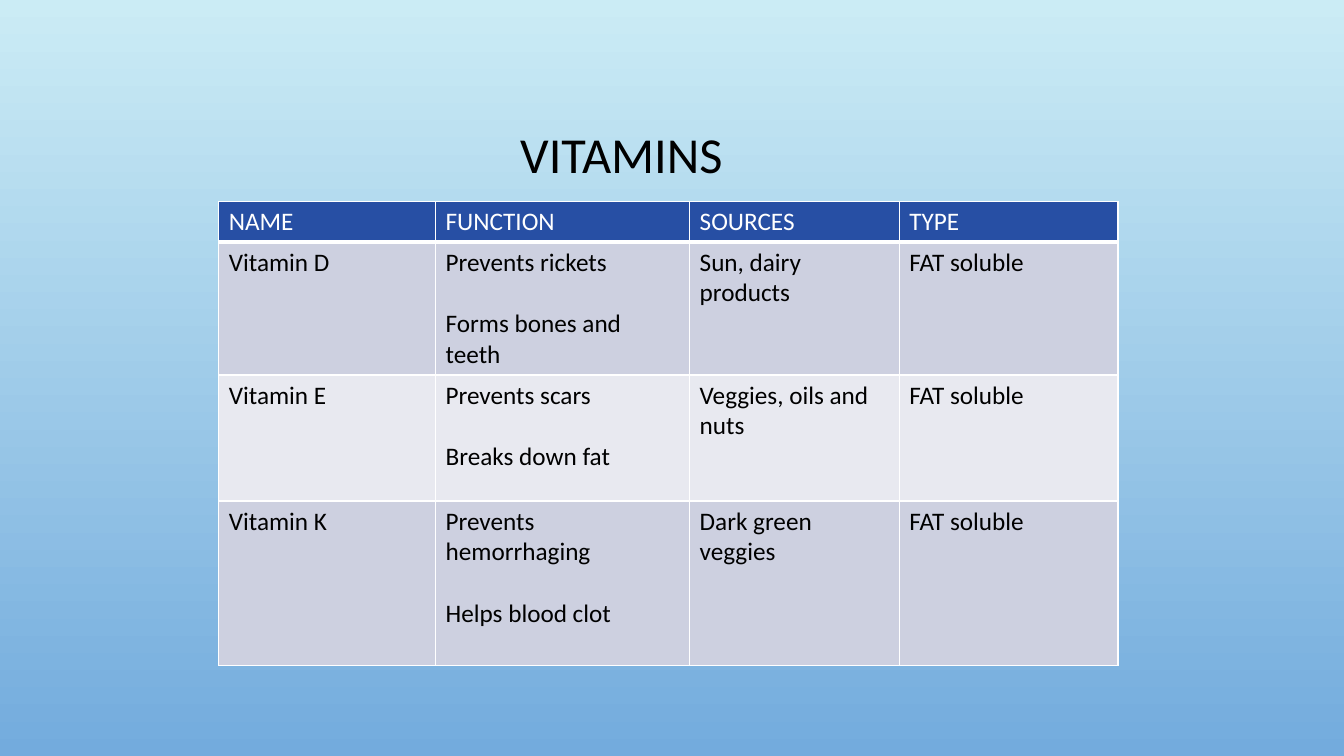
from pptx import Presentation
from pptx.dml.color import RGBColor
from pptx.enum.text import MSO_ANCHOR, PP_ALIGN
from pptx.oxml import parse_xml
from pptx.oxml.ns import nsdecls
from pptx.util import Inches, Pt

THEME = {
    "font": "Calibri",
    "title_size": Pt(36),
    "cell_size": Pt(18),
    "paragraph_gap": Pt(22),
    "text": RGBColor.from_string("000000"),
    "header_text": RGBColor.from_string("FFFFFF"),
    "header_fill": RGBColor.from_string("274FA4"),
    "band_fills": [RGBColor.from_string(c) for c in ("CDD0E0", "E8E9F0")],
    "background": [RGBColor.from_string(c) for c in ("CBECF5", "73ABDD")],
    "border": "FFFFFF",
}


def set_values(target, values):
    for name, value in values.items():
        setattr(target, name, value)


def add_borders(cell, widths):
    """Draw solid cell borders; widths in points by side."""
    properties = cell._tc.get_or_add_tcPr()
    for side, width in widths.items():
        properties.append(parse_xml(
            f'<a:ln{side} {nsdecls("a")} w="{Pt(width)}"><a:solidFill>'
            f'<a:srgbClr val="{THEME["border"]}"/></a:solidFill></a:ln{side}>'))


presentation = Presentation()
set_values(presentation, {"slide_width": Inches(13.33), "slide_height": Inches(7.5)})
slide = presentation.slides.add_slide(presentation.slide_layouts[6])

# Background, light at the top
background = slide.background.fill
background.gradient()
background.gradient_angle = 270
for stop, color, position in zip(background.gradient_stops, THEME["background"], (0, 1)):
    stop.color.rgb = color
    stop.position = position

# Title, set left of centre by a wide right margin
title = slide.shapes.add_textbox(Inches(1), Inches(0.68), Inches(11.33), Inches(1.75))
set_values(title.text_frame, {"word_wrap": True, "vertical_anchor": MSO_ANCHOR.MIDDLE,
                              "margin_right": Inches(1.1)})
paragraph = title.text_frame.paragraphs[0]
set_values(paragraph, {"text": "VITAMINS", "alignment": PP_ALIGN.CENTER, "line_spacing": 0.9})
set_values(paragraph.font, {"name": THEME["font"], "size": THEME["title_size"]})
paragraph.font.color.rgb = THEME["text"]

# Vitamin table
vitamins = [
    ["NAME", "FUNCTION", "SOURCES", "TYPE"],
    ["Vitamin D", "Prevents rickets\nForms bones and teeth", "Sun, dairy products", "FAT soluble"],
    ["Vitamin E", "Prevents scars\nBreaks down fat", "Veggies, oils and nuts", "FAT soluble"],
    ["Vitamin K", "Prevents hemorrhaging\nHelps blood clot", "Dark green veggies", "FAT soluble"],
]
column_widths = [2.15, 2.52, 2.08, 2.17]
row_heights = [0.4, 1.32, 1.25, 1.63]
table = slide.shapes.add_table(
    len(row_heights), len(column_widths), Inches(2.17), Inches(2),
    Inches(sum(column_widths)), Inches(sum(row_heights))).table
set_values(table, {"first_row": False, "horz_banding": False})
for column, width in zip(table.columns, column_widths):
    column.width = Inches(width)

for row_index, (row, height) in enumerate(zip(table.rows, row_heights)):
    row.height = Inches(height)
    is_header = row_index == 0
    fill = THEME["header_fill"] if is_header else THEME["band_fills"][(row_index - 1) % 2]
    for cell, text in zip(row.cells, vitamins[row_index]):
        add_borders(cell, {"L": 1, "R": 1, "T": 1, "B": 3 if is_header else 1})
        cell.fill.solid()
        cell.fill.fore_color.rgb = fill
        cell.text = text
        for index, paragraph in enumerate(cell.text_frame.paragraphs):
            if index:
                paragraph.space_before = THEME["paragraph_gap"]
            set_values(paragraph.font, {"name": THEME["font"], "size": THEME["cell_size"]})
            paragraph.font.color.rgb = THEME["header_text" if is_header else "text"]

presentation.save("out.pptx")
